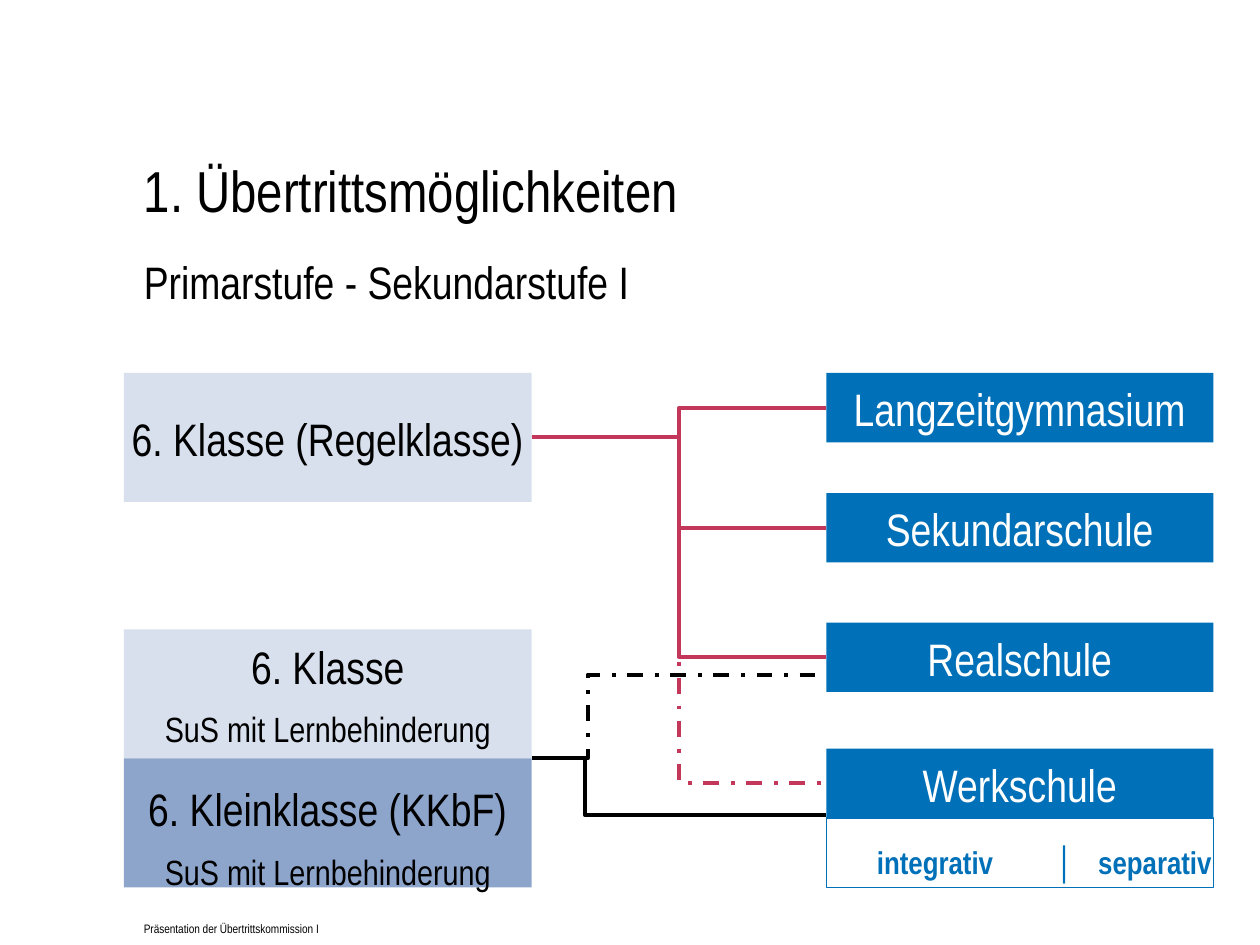
from dataclasses import dataclass

from lxml import etree
from pptx import Presentation
from pptx.dml.color import RGBColor
from pptx.enum.dml import MSO_LINE
from pptx.enum.shapes import MSO_CONNECTOR, MSO_SHAPE
from pptx.enum.text import MSO_ANCHOR, PP_ALIGN
from pptx.oxml.ns import qn
from pptx.util import Cm, Pt

RECT = MSO_SHAPE.RECTANGLE
ELBOW = MSO_CONNECTOR.ELBOW
DASH = MSO_LINE.DASH_DOT
MIDDLE, TOP = MSO_ANCHOR.MIDDLE, MSO_ANCHOR.TOP
CENTER, LEFT = PP_ALIGN.CENTER, PP_ALIGN.LEFT
LEFT_SIDE, RIGHT_SIDE = 1, 3


@dataclass(frozen=True)
class Theme:
    font: str = "Arial Narrow"
    black: str = "000000"
    white: str = "FFFFFF"
    blue: str = "0070B8"
    pale: str = "CCD6E8"
    slate: str = "6886BA"
    red: str = "C3375A"
    title: int = 33
    body: int = 26
    note: int = 20
    split: int = 18
    foot: int = 7
    leading: int = 32


THEME = Theme()


def rgb(color):
    return RGBColor.from_string(color)


def write(shape, lines, color, align=LEFT, anchor=TOP, leading=THEME.leading):
    """Fill a shape with one paragraph of (text, size) lines."""
    frame = shape.text_frame
    frame.word_wrap = True
    frame.vertical_anchor = anchor
    frame.margin_left = frame.margin_right = 0
    frame.margin_top = frame.margin_bottom = 0
    para = frame.paragraphs[0]
    para.alignment = align
    if leading:
        para.line_spacing = Pt(leading)
    for i, (text, size) in enumerate(lines):
        if i:
            para.add_line_break()
        run = para.add_run()
        run.text = text
        run.font.size = Pt(size)
    para.font.name = THEME.font
    para.font.color.rgb = rgb(color)
    return para


def label(slide, box, text, size, leading=None):
    shape = slide.shapes.add_textbox(*map(Cm, box))
    write(shape, [(text, size)], THEME.black, leading=leading)


def block(slide, box, fill, alpha=None):
    shape = slide.shapes.add_shape(RECT, *map(Cm, box))
    shape.shadow.inherit = False
    shape.fill.solid()
    shape.fill.fore_color.rgb = rgb(fill)
    shape.line.fill.background()
    if alpha:
        tone = shape.fill._xPr.find(".//" + qn("a:srgbClr"))
        etree.SubElement(tone, qn("a:alpha"), val=str(alpha * 1000))
    return shape


def elbow(slide, start, end, color, bend=0.5, dash=None):
    """Draw a bent line that turns at the given share of its width."""
    line = slide.shapes.add_connector(ELBOW, *start, *end)
    line.line.color.rgb = rgb(color)
    line.line.width = Pt(2.25)
    if dash:
        line.line.dash_style = dash
    props = line._element.spPr
    etree.SubElement(props, qn("a:effectLst"))
    guides = props.find(qn("a:prstGeom")).find(qn("a:avLst"))
    etree.SubElement(guides, qn("a:gd"), name="adj1",
                     fmla=f"val {round(bend * 100000)}")
    return line


def heading(slide, box):
    x, y, w, h = box
    label(slide, (x, y, w, 1.8), "1. Übertrittsmöglichkeiten", THEME.title)
    label(slide, (x, y + 1.98, w, h - 1.98), "Primarstufe - Sekundarstufe I",
          THEME.body, THEME.leading)


def classes(slide, box):
    """Place the primary classes and return their shapes."""
    x, y, w, h = box
    tall = 2.6
    note = ("SuS mit Lernbehinderung", THEME.note)
    rows = [
        (0, THEME.pale, [("6. Klasse (Regelklasse)", THEME.body)]),
        (h - 2 * tall, THEME.pale, [("6. Klasse", THEME.body), note]),
        (h - tall, THEME.slate, [("6. Kleinklasse (KKbF)", THEME.body), note]),
    ]
    shapes = []
    for drop, fill, lines in rows:
        shape = block(slide, (x, y + drop, w, tall), fill, 75)
        write(shape, lines, THEME.black, CENTER, MIDDLE)
        shapes.append(shape)
    shapes[-1].text_frame.margin_top = Cm(0.53)
    return shapes


def schools(slide, box):
    """Place the secondary schools and return their shapes."""
    x, y, w, h = box
    tall = 1.4
    rows = [("Langzeitgymnasium", 0), ("Sekundarschule", 2.42),
            ("Realschule", 5.03), ("Werkschule", h - 2 * tall)]
    shapes = []
    for name, drop in rows:
        shape = block(slide, (x, y + drop, w, tall), THEME.blue)
        write(shape, [(name, THEME.body)], THEME.white, CENTER, MIDDLE)
        shapes.append(shape)
    forms(slide, (x, y + h - tall, w, tall))
    return shapes


def forms(slide, box):
    shape = block(slide, box, THEME.white)
    shape.line.color.rgb = rgb(THEME.blue)
    shape.line.width = Pt(0.75)
    para = write(shape, [("integrativ\t│\tseparativ", THEME.split)],
                 THEME.blue, LEFT, MIDDLE)
    props = para._p.get_or_add_pPr()
    stops = etree.Element(qn("a:tabLst"))
    for place, kind in ((3.8, "ctr"), (4.46, "l")):
        etree.SubElement(stops, qn("a:tab"), pos=str(Cm(place)), algn=kind)
    props.find(qn("a:defRPr")).addprevious(stops)
    para.font.bold = True
    shape.text_frame.margin_left = Cm(1.02)


def paths(slide, sources, targets):
    """Link the classes with the schools they lead to."""
    regular, _, small = sources
    start = (regular.left + regular.width, regular.top + regular.height // 2)
    for target in targets:
        end = (target.left, target.top + target.height // 2)
        dash = DASH if target is targets[-1] else None
        line = elbow(slide, start, end, THEME.red, dash=dash)
        line.begin_connect(regular, RIGHT_SIDE)
        line.end_connect(target, LEFT_SIDE)

    real, work = targets[-2:]
    edge = small.left + small.width
    elbow(slide, (edge, small.top),
          (work.left, work.top + Cm(1.34)), THEME.black, 0.18)
    elbow(slide, (edge + Cm(0.14), small.top),
          (real.left, real.top + Cm(1.05)), THEME.black, 0.17, DASH)


def main():
    deck = Presentation()
    deck.slide_width, deck.slide_height = Cm(25.4), Cm(19.05)
    slide = deck.slides.add_slide(deck.slide_layouts[6])
    heading(slide, (2.9, 3.12, 21.6, 3.98))
    sources = classes(slide, (2.5, 7.52, 8.22, 10.37))
    targets = schools(slide, (16.66, 7.52, 7.8, 10.37))
    paths(slide, sources, targets)
    label(slide, (2.9, 18.57, 13, 0.4),
          "Präsentation der Übertrittskommission I", THEME.foot)
    deck.save("out.pptx")


if __name__ == "__main__":
    main()
